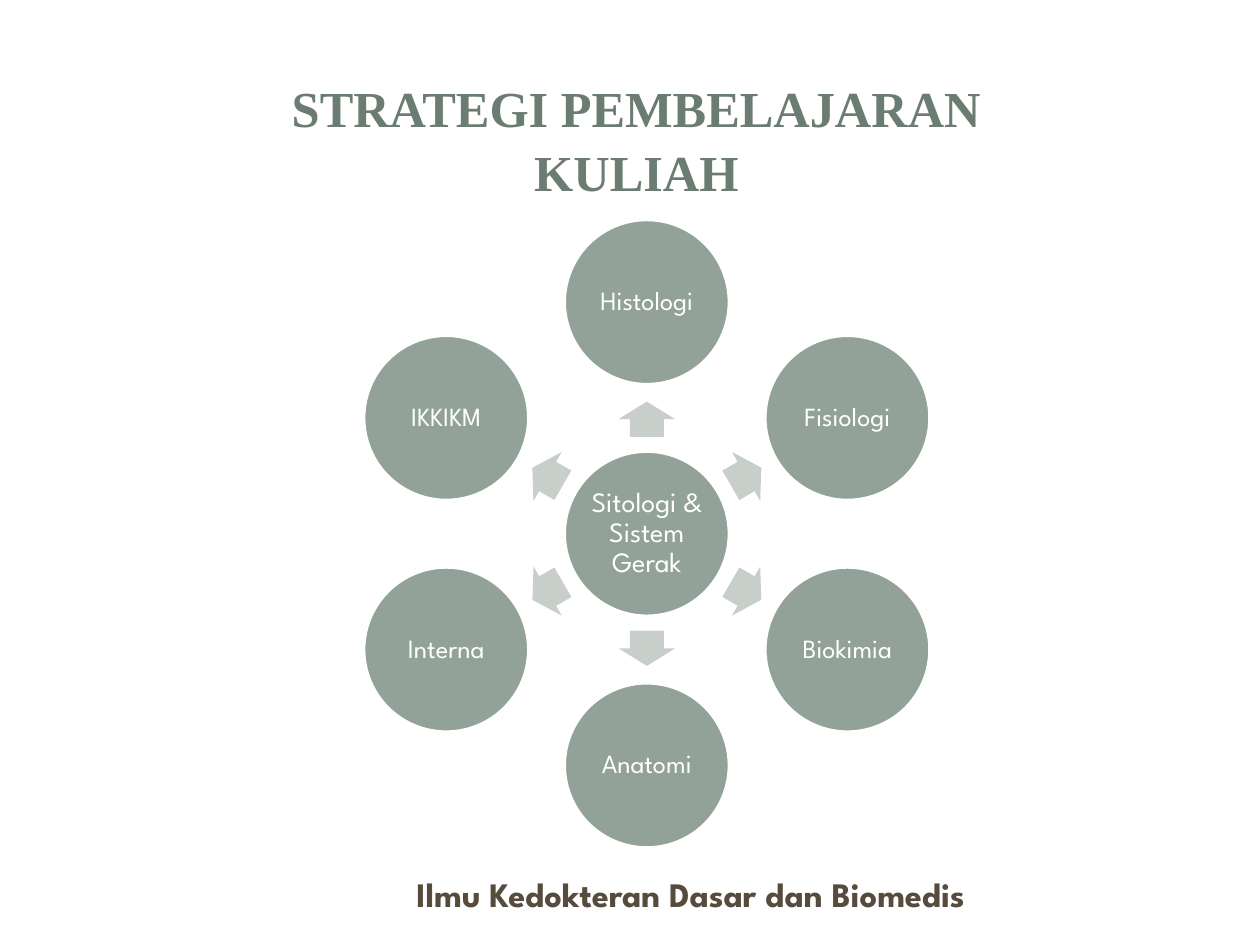
"""Build a slide with a radial diagram of the lecture subjects."""
import math

import pptx
import pptx.dml.color
import pptx.enum.shapes
import pptx.enum.text
import pptx.util

Cm = pptx.util.Cm
Pt = pptx.util.Pt
SHAPES = pptx.enum.shapes.MSO_SHAPE
ANCHOR = pptx.enum.text.MSO_ANCHOR
CENTER = pptx.enum.text.PP_ALIGN.CENTER


def color(value):
    return pptx.dml.color.RGBColor.from_string(value)


def write(shape, text, size, font_name, font_color, bold=False):
    shape.text_frame.word_wrap = True
    shape.text_frame.text = text
    paragraph = shape.text_frame.paragraphs[0]
    paragraph.alignment = CENTER
    paragraph.font.size = Pt(size)
    paragraph.font.name = font_name
    paragraph.font.bold = bold
    paragraph.font.color.rgb = color(font_color)
    return paragraph


presentation = pptx.Presentation()
presentation.slide_width = Cm(25.4)
presentation.slide_height = Cm(19.05)
slide = presentation.slides.add_slide(presentation.slide_layouts[6])

title = slide.shapes.add_textbox(Cm(1.4), Cm(2.41), Cm(22.86), Cm(1.98))
title.text_frame.vertical_anchor = ANCHOR.BOTTOM
title.text_frame.margin_bottom = Cm(0.33)
paragraph = write(title, "STRATEGI PEMBELAJARAN\vKULIAH", 28.8, "Times New Roman", "6B7D72", True)
paragraph.line_spacing = 1.05

caption = slide.shapes.add_textbox(Cm(5.72), Cm(17.48), Cm(16.08), Cm(0.94))
caption.text_frame.margin_left = Cm(0.58)
paragraph = write(caption, "Ilmu Kedokteran Dasar dan Biomedis", 19.6, "League Spartan", "564B3C", True)
paragraph.space_before = Pt(4)

center_x, center_y = 13.04, 10.76
diameter, orbit = 3.33, 4.67
arrow_length, arrow_width, arrow_orbit = 0.71, 1.14, 2.31
subjects = ["Histologi", "Fisiologi", "Biokimia", "Anatomi", "Interna", "IKKIKM"]

circles = [("Sitologi & Sistem Gerak", 16, center_x, center_y)]
for index, subject in enumerate(subjects):
    degrees = index * 360 / len(subjects) - 90
    cosine, sine = math.cos(math.radians(degrees)), math.sin(math.radians(degrees))
    circles.append((subject, 15, center_x + orbit * cosine, center_y + orbit * sine))
    arrow = slide.shapes.add_shape(
        SHAPES.RIGHT_ARROW,
        Cm(center_x + arrow_orbit * cosine - arrow_length / 2),
        Cm(center_y + arrow_orbit * sine - arrow_width / 2),
        Cm(arrow_length), Cm(arrow_width))
    arrow.rotation = degrees % 360
    arrow.adjustments[0] = 0.6
    arrow.adjustments[1] = 0.5
    arrow.shadow.inherit = False
    arrow.fill.solid()
    arrow.fill.fore_color.rgb = color("C8CECA")
    arrow.line.fill.background()

for text, size, x, y in circles:
    circle = slide.shapes.add_shape(
        SHAPES.OVAL, Cm(x - diameter / 2), Cm(y - diameter / 2), Cm(diameter), Cm(diameter))
    circle.shadow.inherit = False
    circle.fill.solid()
    circle.fill.fore_color.rgb = color("93A299")
    circle.line.color.rgb = color("FFFFFF")
    circle.line.width = Pt(2)
    frame = circle.text_frame
    frame.vertical_anchor = ANCHOR.MIDDLE
    frame.margin_left = frame.margin_right = frame.margin_top = frame.margin_bottom = Cm(0.05)
    paragraph = write(circle, text, size, "League Spartan", "FFFFFF")
    paragraph.line_spacing = 0.9

presentation.save("out.pptx")
